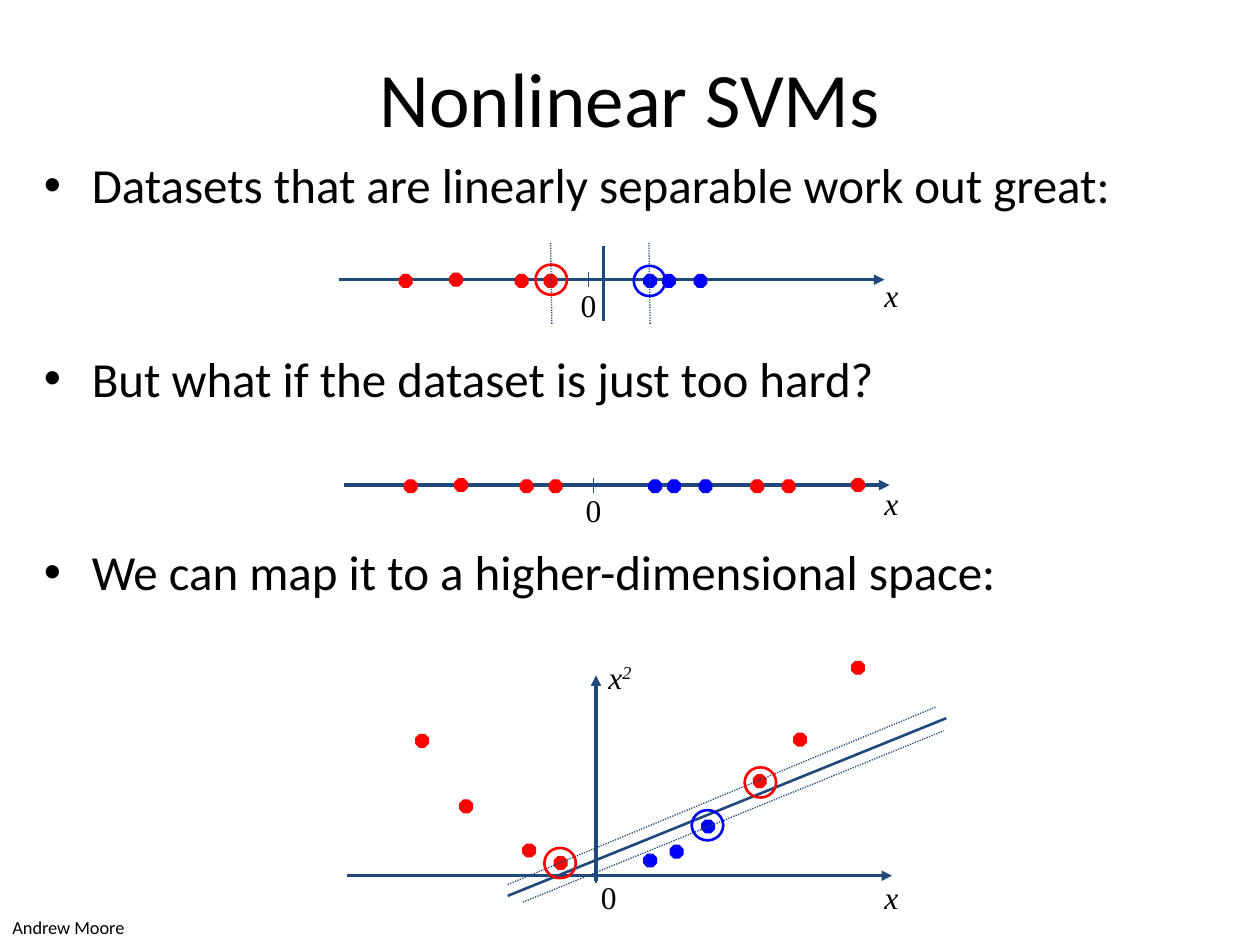
"""Build a slide on nonlinear SVMs with three dataset diagrams."""
from dataclasses import dataclass

from lxml import etree
from pptx import Presentation
from pptx.dml.color import RGBColor
from pptx.enum.dml import MSO_LINE
from pptx.enum.shapes import MSO_CONNECTOR, MSO_SHAPE
from pptx.enum.text import MSO_ANCHOR, PP_ALIGN
from pptx.oxml.ns import qn
from pptx.util import Inches, Pt

STRAIGHT = MSO_CONNECTOR.STRAIGHT
OCTAGON, OVAL = MSO_SHAPE.OCTAGON, MSO_SHAPE.OVAL
DOTTED = MSO_LINE.ROUND_DOT
MIDDLE, TOP = MSO_ANCHOR.MIDDLE, MSO_ANCHOR.TOP
CENTER, LEFT = PP_ALIGN.CENTER, PP_ALIGN.LEFT


@dataclass(frozen=True)
class Theme:
    ink: RGBColor = RGBColor(0, 0, 0)
    axis: RGBColor = RGBColor(0x1F, 0x49, 0x7D)
    red: RGBColor = RGBColor(0xFF, 0, 0)
    blue: RGBColor = RGBColor(0, 0, 0xFF)
    sans: str = "Calibri"
    serif: str = "Times New Roman"
    title: float = 44
    body: float = 28
    label: float = 18
    credit: float = 10.5
    thin: float = 0.75
    medium: float = 1.5
    thick: float = 2


THEME = Theme()
DOT = 0.1
RING = (0.25, 0.24)
BULLETS = (
    "Datasets that are linearly separable work out great:",
    "But what if the dataset is just too hard?",
    "We can map it to a higher-dimensional space:",
)
LEFT_REDS = ((0.48, -0.04), (0.88, -0.05), (1.4, -0.04), (1.63, -0.04))
BLUES = ((2.42, -0.04), (2.57, -0.04), (2.82, -0.04))
RIGHT_REDS = ((3.23, -0.04), (3.48, -0.04), (4.03, -0.05))
MAPPED_REDS = ((3.3, 5.83), (3.65, 6.35), (4.15, 6.7), (4.4, 6.8),
               (5.98, 6.15), (6.3, 5.82), (6.76, 5.25))
MAPPED_BLUES = ((5.11, 6.78), (5.32, 6.71), (5.57, 6.51))


def add_span(para, text, size, font=THEME.sans, **extra):
    """Append a formatted run to a paragraph."""
    span = para.add_run()
    span.text = text
    span.font.color.rgb = THEME.ink
    for name, value in {"size": Pt(size), "name": font, **extra}.items():
        setattr(span.font, name, value)
    return span


def add_box(shapes, left, top, width, height, anchor=TOP, wrap=True):
    """Add an empty text box and return its text frame."""
    box = shapes.add_textbox(*map(Inches, (left, top, width, height)))
    for name, value in {"word_wrap": wrap, "vertical_anchor": anchor}.items():
        setattr(box.text_frame, name, value)
    return box.text_frame


def add_text(shapes, text, at, size, align=LEFT, **box_format):
    """Add a text box holding one plain sans paragraph."""
    para = add_box(shapes, *at, **box_format).paragraphs[0]
    para.alignment = align
    add_span(para, text, size)


def add_bullets(shapes, items):
    """Add the bulleted statements, spaced to leave room for the diagrams."""
    frame = add_box(shapes, 0.25, 1.18, 9.58, 5.5)
    for index, item in enumerate(items):
        para = frame.add_paragraph() if index else frame.paragraphs[0]
        para.space_before = Pt(77 if index else 0)
        add_span(para, item, THEME.body)
        props = para._p.get_or_add_pPr()
        props.set("marL", str(Inches(0.38)))
        props.set("indent", str(Inches(-0.38)))
        etree.SubElement(props, qn("a:buFont"), typeface="Arial")
        etree.SubElement(props, qn("a:buChar"), char="•")


def add_label(shapes, text, left, top, width=0.5, power=None):
    """Add an axis label, italic for variables, with an optional exponent."""
    para = add_box(shapes, left, top, width, 0.4).paragraphs[0]
    italic = text.isalpha()
    add_span(para, text, THEME.label, THEME.serif, italic=italic)
    if power:
        span = add_span(para, power, THEME.label, THEME.serif, italic=italic)
        span.font._element.set("baseline", "30000")


def add_line(shapes, start, end, width, dash=None, arrow=False):
    """Add a straight line, optionally dotted or ending in an arrowhead."""
    line = shapes.add_connector(STRAIGHT, *map(Inches, (*start, *end)))
    line.line.color.rgb = THEME.axis
    for name, value in {"width": Pt(width), "dash_style": dash}.items():
        setattr(line.line, name, value)
    if arrow:
        etree.SubElement(line.line._get_or_add_ln(), qn("a:tailEnd"), type="triangle")
    etree.SubElement(line._element.spPr, qn("a:effectLst"))


def add_mark(shapes, kind, at, size, color, width):
    """Add an outlined marker and return it."""
    mark = shapes.add_shape(kind, *map(Inches, (*at, *size)))
    mark.shadow.inherit = False
    mark.line.color.rgb = color
    mark.line.width = Pt(width)
    return mark


def add_dots(shapes, points, color, origin=(0, 0)):
    """Add data points placed relative to an origin."""
    for x, y in points:
        at = (origin[0] + x, origin[1] + y)
        dot = add_mark(shapes, OCTAGON, at, (DOT, DOT), color, THEME.thin)
        dot.adjustments[0] = 0.293
        dot.fill.solid()
        dot.fill.fore_color.rgb = color


def add_ring(shapes, left, top, color):
    """Circle a support vector."""
    add_mark(shapes, OVAL, (left, top), RING, color, THEME.medium).fill.background()


def add_axis(shapes, left, y, zero):
    """Add a horizontal axis with a tick at zero."""
    add_line(shapes, (left, y), (left + 4.33, y), THEME.thick, arrow=True)
    add_line(shapes, (zero, y - 0.06), (zero, y + 0.06), THEME.thin)


def add_number_line(shapes, left, y, reds, label_top):
    """Add a one-dimensional dataset on its axis."""
    add_axis(shapes, left, y, left + 1.98)
    add_dots(shapes, reds, THEME.red, (left, y))
    add_dots(shapes, BLUES, THEME.blue, (left, y))
    add_label(shapes, "0", left + 1.82, y, 0.38)
    add_label(shapes, "x", 6.92, label_top)


def add_separable(shapes):
    """Add the separable dataset with its boundary and margins."""
    add_number_line(shapes, 2.69, 2.22, LEFT_REDS, 2.14)
    add_line(shapes, (4.79, 1.95), (4.79, 2.55), THEME.medium)
    for x in (4.38, 5.16):
        add_line(shapes, (x, 2.57), (x - 0.01, 1.92), THEME.thin, DOTTED)
    add_ring(shapes, 5.03, 2.11, THEME.blue)
    add_ring(shapes, 4.25, 2.1, THEME.red)


def add_mapped(shapes):
    """Add the dataset mapped to two dimensions with its boundary."""
    add_axis(shapes, 2.75, 6.95, 4.73)
    add_line(shapes, (4.73, 6.99), (4.73, 5.36), THEME.thick, arrow=True)
    add_dots(shapes, MAPPED_REDS, THEME.red)
    add_dots(shapes, MAPPED_BLUES, THEME.blue)
    add_line(shapes, (4.03, 7.11), (7.51, 5.7), THEME.medium)
    add_line(shapes, (4.03, 7.02), (7.43, 5.61), THEME.thin, DOTTED)
    add_line(shapes, (4.15, 7.16), (7.49, 5.8), THEME.thin, DOTTED)
    add_ring(shapes, 5.91, 6.09, THEME.red)
    add_ring(shapes, 5.49, 6.43, THEME.blue)
    add_ring(shapes, 4.32, 6.73, THEME.red)
    add_label(shapes, "x", 4.73, 5.17, power="2")
    add_label(shapes, "0", 4.67, 6.92, 0.38)
    add_label(shapes, "x", 6.92, 6.92)


def main():
    """Assemble and save the deck."""
    deck = Presentation()
    deck.slide_width, deck.slide_height = Inches(10), Inches(7.5)
    shapes = deck.slides.add_slide(deck.slide_layouts[6]).shapes
    add_bullets(shapes, BULLETS)
    add_number_line(shapes.add_group_shape().shapes, 2.73, 3.85,
                    LEFT_REDS + RIGHT_REDS, 3.79)
    add_separable(shapes.add_group_shape().shapes)
    add_mapped(shapes.add_group_shape().shapes)
    add_text(shapes, "Nonlinear SVMs", (0.5, 0.14, 9, 1.25), THEME.title,
             CENTER, anchor=MIDDLE)
    add_text(shapes, "Andrew Moore", (0, 7.22, 1.15, 0.29), THEME.credit, wrap=False)
    deck.save("out.pptx")


if __name__ == "__main__":
    main()
